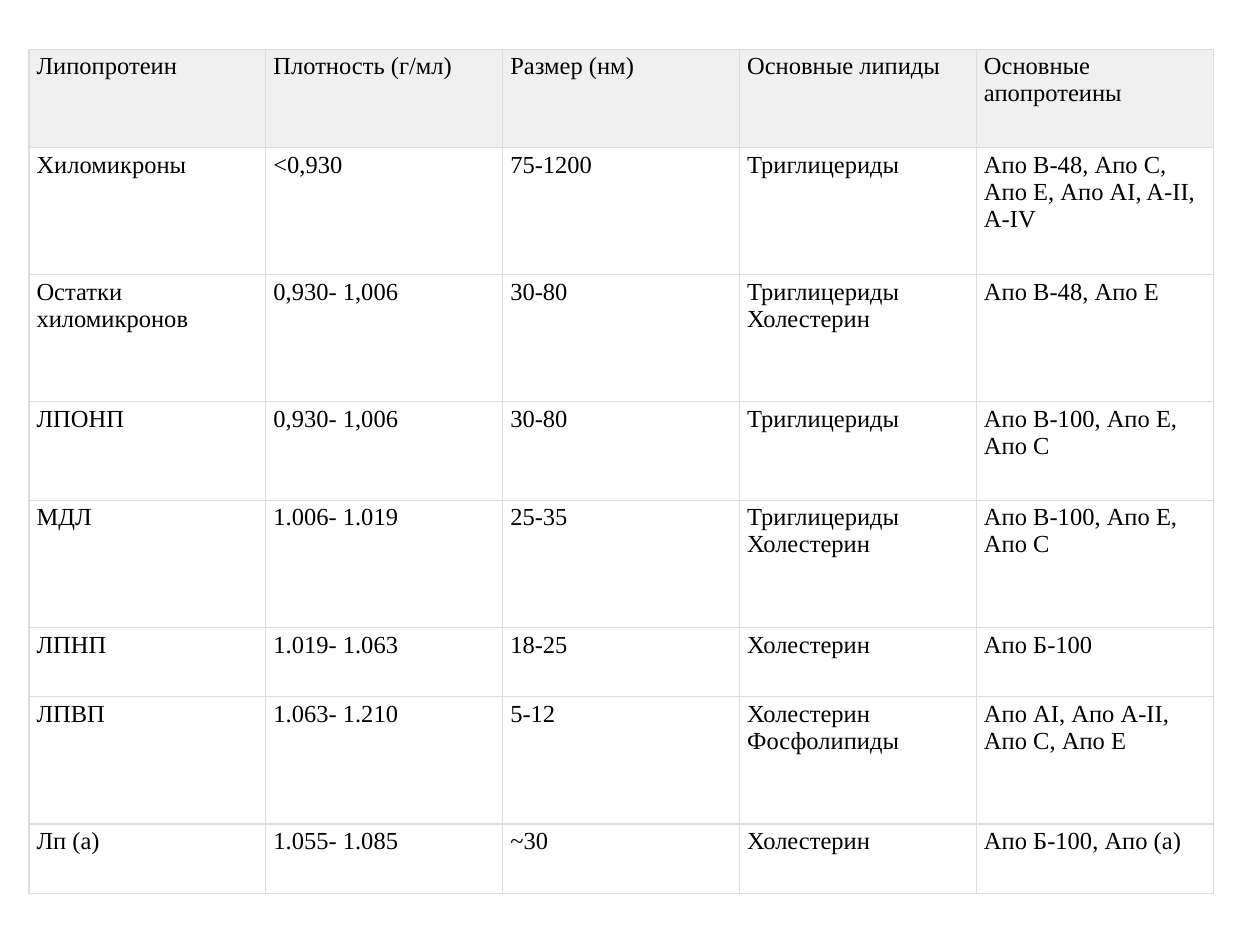
from dataclasses import dataclass

from lxml import etree
from pptx import Presentation
from pptx.dml.color import RGBColor
from pptx.enum.text import MSO_ANCHOR, PP_ALIGN
from pptx.oxml.ns import qn
from pptx.util import Pt

EMU_PER_PX = 9144  # 100 px to the inch
TOP = MSO_ANCHOR.TOP
LEFT = PP_ALIGN.LEFT

TABLE_LEFT, TABLE_TOP, COLUMN_WIDTH = 23, 39, 188
HEADER_FILL, BODY_FILL, BORDER, INK = "F0F0F0", "FFFFFF", "DDDDDD", "000000"
BORDER_SIDES = ("a:lnL", "a:lnR", "a:lnT", "a:lnB")


@dataclass(frozen=True)
class Row:
    height: int
    texts: tuple[str, ...]
    fill: str = BODY_FILL


ROWS = (
    Row(78, ("Липопротеин", "Плотность (г/мл)", "Размер (нм)",
             "Основные липиды", "Основные апопротеины"), HEADER_FILL),
    Row(101, ("Хиломикроны", "<0,930", "75-1200", "Триглицериды",
              "Апо B-48, Апо C, Апо E, Апо AI, A-II, A-IV")),
    Row(101, ("Остатки хиломикронов", "0,930- 1,006", "30-80",
              "Триглицериды Холестерин", "Апо B-48, Апо E")),
    Row(78, ("ЛПОНП", "0,930- 1,006", "30-80", "Триглицериды",
             "Апо B-100, Апо E, Апо C")),
    Row(101, ("МДЛ", "1.006- 1.019", "25-35", "Триглицериды Холестерин",
              "Апо B-100, Апо E, Апо C")),
    Row(55, ("ЛПНП", "1.019- 1.063", "18-25", "Холестерин", "Апо Б-100")),
    Row(101, ("ЛПВП", "1.063- 1.210", "5-12", "Холестерин Фосфолипиды",
              "Апо AI, Апо A-II, Апо C, Апо E")),
    Row(55, ("Лп (а)", "1.055- 1.085", "~30", "Холестерин",
             "Апо Б-100, Апо (а)")),
)


def px(length: int) -> int:
    return length * EMU_PER_PX


def color(value: str) -> RGBColor:
    return RGBColor.from_string(value)


CELL_FORMAT = {
    "margin_left": px(6), "margin_right": px(6),
    "margin_top": px(3), "margin_bottom": px(3),
    "vertical_anchor": TOP,
}
FONT_FORMAT = {"name": "Times New Roman", "size": Pt(14), "bold": False}


def apply_format(target, values: dict) -> None:
    for name, value in values.items():
        setattr(target, name, value)


def draw_borders(cell) -> None:
    properties = cell._tc.get_or_add_tcPr()
    # Borders come before the fill in the cell properties
    for index, side in enumerate(BORDER_SIDES):
        line = etree.Element(qn(side), w=str(Pt(0.75)))
        solid = etree.SubElement(line, qn("a:solidFill"))
        etree.SubElement(solid, qn("a:srgbClr"), val=BORDER)
        properties.insert(index, line)


def fill_cell(cell, text: str, fill: str) -> None:
    apply_format(cell, CELL_FORMAT)
    cell.fill.solid()
    cell.fill.fore_color.rgb = color(fill)
    para = cell.text_frame.paragraphs[0]
    para.alignment = LEFT
    span = para.add_run()
    span.text = text
    apply_format(span.font, FONT_FORMAT)
    span.font.color.rgb = color(INK)
    draw_borders(cell)


def draw_table(page, rows: tuple[Row, ...]) -> None:
    columns = len(rows[0].texts)
    frame = page.shapes.add_table(
        len(rows), columns, px(TABLE_LEFT), px(TABLE_TOP),
        px(columns * COLUMN_WIDTH), px(sum(row.height for row in rows)))
    table = frame.table
    for column in table.columns:
        column.width = px(COLUMN_WIDTH)
    for row_index, row in enumerate(rows):
        table.rows[row_index].height = px(row.height)
        for column_index, text in enumerate(row.texts):
            fill_cell(table.cell(row_index, column_index), text, row.fill)


def main() -> None:
    deck = Presentation()
    deck.slide_width, deck.slide_height = px(1000), px(750)
    page = deck.slides.add_slide(deck.slide_layouts[6])
    # Lipoprotein classes and their properties
    draw_table(page, ROWS)
    deck.save("out.pptx")


if __name__ == "__main__":
    main()
